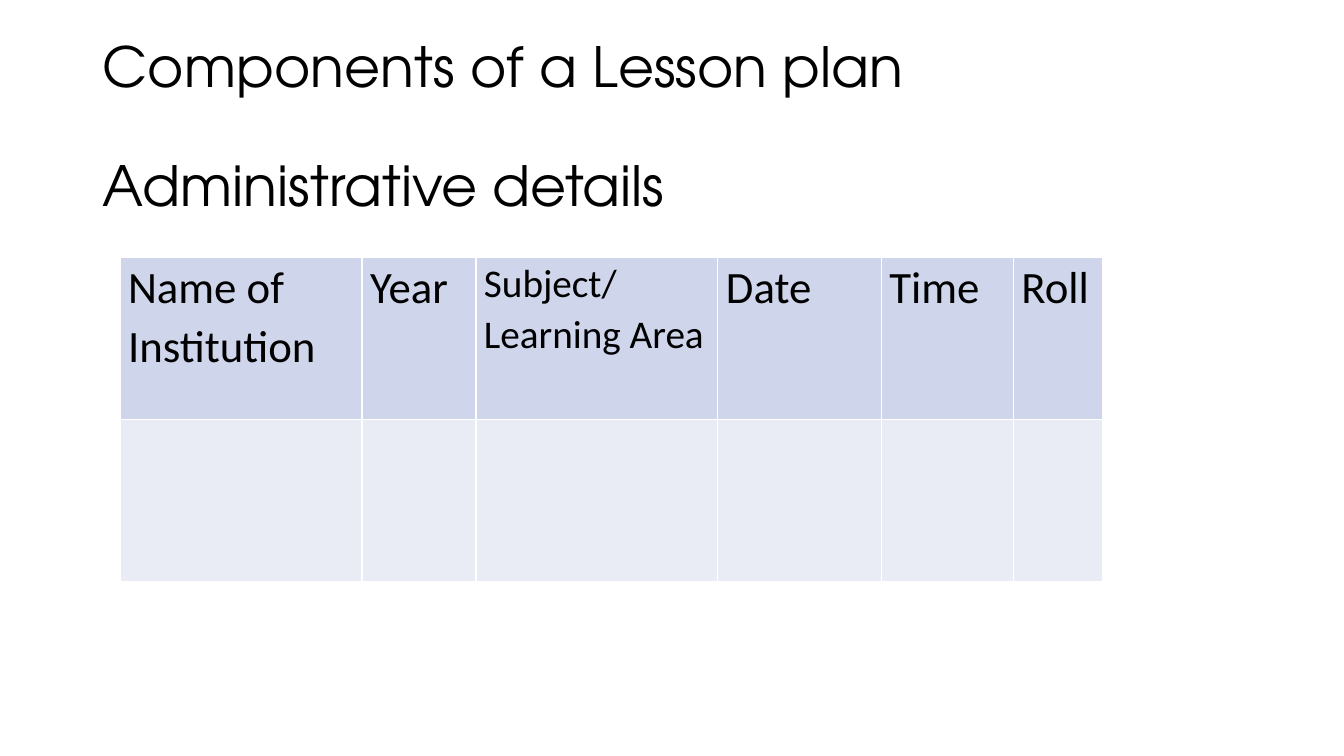
from lxml.etree import SubElement
from pptx import Presentation
from pptx.dml.color import RGBColor
from pptx.enum.text import MSO_ANCHOR
from pptx.oxml.ns import qn
from pptx.util import Inches, Pt

COLOURS = {"text": "000000", "header": "CFD5EA", "entry": "E9EBF5", "border": "FFFFFF"}
TITLE_FONT = "TeX Gyre Adventor"
TABLE_FONT = "Calibri"
TITLE_LINES = ["Components of a Lesson plan", "Administrative details"]
# Each column: width in inches, header lines, text size in points
COLUMNS = [
    (2.4, ["Name of Institution"], 32),
    (1.13, ["Year"], 32),
    (2.4, ["Subject/", "Learning Area"], 28),
    (1.62, ["Date"], 32),
    (1.31, ["Time"], 32),
    (0.89, ["Roll"], 32),
]


def write_lines(text_frame, lines, font_name, size, line_spacing, gap=0):
    """Write one paragraph per line, with a gap in points between them."""
    for index, line in enumerate(lines):
        paragraph = text_frame.add_paragraph() if index else text_frame.paragraphs[0]
        paragraph.line_spacing = line_spacing
        if index:
            paragraph.space_before = Pt(gap)
        run = paragraph.add_run()
        run.text = line
        run.font.name = font_name
        run.font.size = Pt(size)
        run.font.color.rgb = RGBColor.from_string(COLOURS["text"])


def add_title(slide, left, top, width, height):
    box = slide.shapes.add_textbox(Inches(left), Inches(top), Inches(width), Inches(height))
    text_frame = box.text_frame
    text_frame.word_wrap = True
    text_frame.vertical_anchor = MSO_ANCHOR.MIDDLE
    write_lines(text_frame, TITLE_LINES, TITLE_FONT, 39.6, 0.9, gap=42.8)


def style_cell(cell, fill):
    properties = cell._tc.get_or_add_tcPr()
    for side in ("a:lnL", "a:lnR", "a:lnT", "a:lnB"):
        line = SubElement(properties, qn(side), w=str(Pt(1)))
        solid = SubElement(line, qn("a:solidFill"))
        SubElement(solid, qn("a:srgbClr"), val=COLOURS["border"])
    cell.fill.solid()
    cell.fill.fore_color.rgb = RGBColor.from_string(COLOURS[fill])


def add_details_table(slide, left, top, width, height):
    """Place a header row above an empty row for the entries."""
    table = slide.shapes.add_table(
        2, len(COLUMNS), Inches(left), Inches(top), Inches(width), Inches(height)
    ).table
    for row in table.rows:
        row.height = Inches(height / 2)
    for index, (column_width, lines, size) in enumerate(COLUMNS):
        table.columns[index].width = Inches(column_width)
        header, entry = table.cell(0, index), table.cell(1, index)
        style_cell(header, "header")
        style_cell(entry, "entry")
        header.margin_left = header.margin_right = Inches(0.08)
        header.margin_top = header.margin_bottom = 0
        write_lines(header.text_frame, lines, TABLE_FONT, size, 1.07)


def main():
    presentation = Presentation()
    presentation.slide_width = Inches(13.33)
    presentation.slide_height = Inches(7.5)
    slide = presentation.slides.add_slide(presentation.slide_layouts[6])
    add_title(slide, 0.92, 0.4, 11.5, 1.76)
    add_details_table(slide, 1.19, 2.55, 9.75, 3.22)
    presentation.save("out.pptx")


if __name__ == "__main__":
    main()
